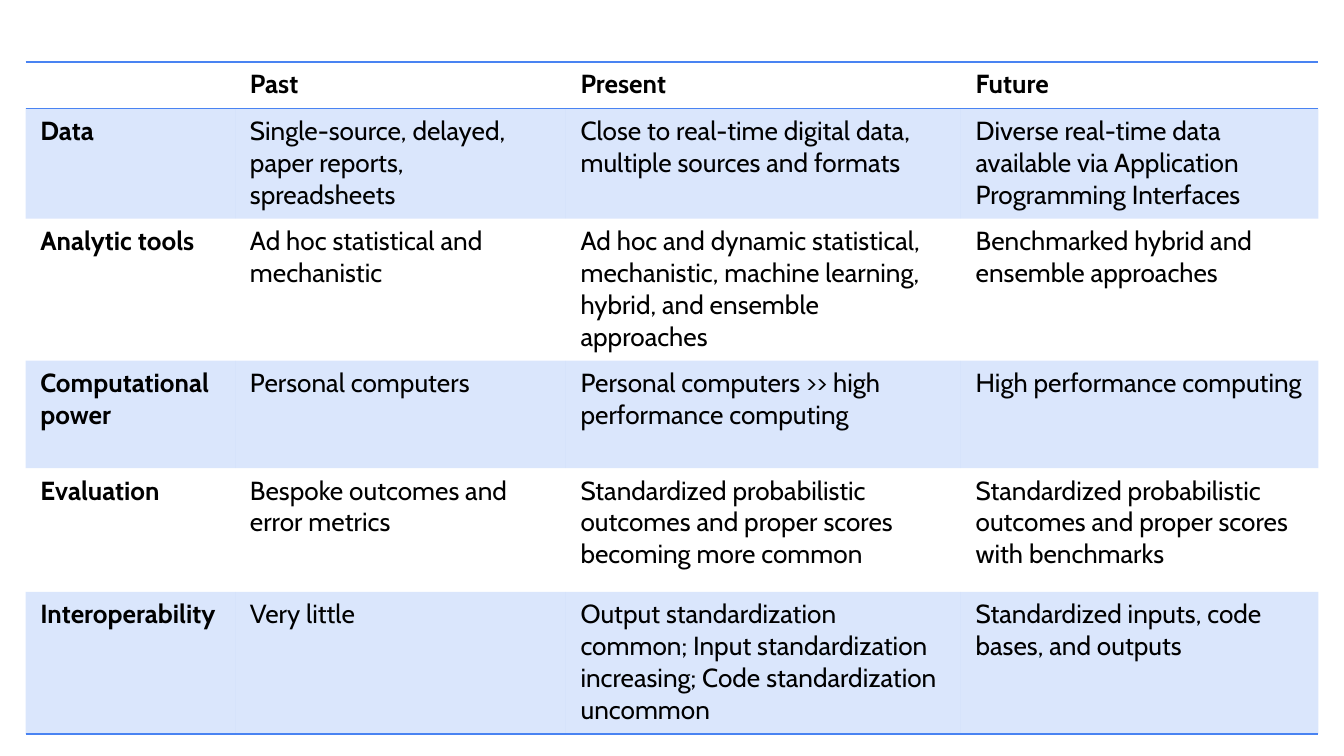
import pptx
import pptx.util
import pptx.dml.color
import pptx.oxml.ns
import lxml.etree

Inches, Pt, qn = pptx.util.Inches, pptx.util.Pt, pptx.oxml.ns.qn

COLORS = {"text": "000000", "accent": "4983F2"}
BAND_ALPHA = 20
NO_STYLE = "{2D5ABB26-0587-4C30-8999-92F81FD0307C}"
COLS = [1.56, 2.46, 2.94, 2.66]
HEIGHTS = [0.34, 0.8, 0.92, 0.8, 0.92, 0.92]
ROWS = [
    ["", "Past", "Present", "Future"],
    ["Data",
     "Single-source, delayed, paper reports, spreadsheets",
     "Close to real-time digital data, multiple sources and formats",
     "Diverse real-time data available via Application Programming Interfaces"],
    ["Analytic tools",
     "Ad hoc statistical and mechanistic",
     "Ad hoc and dynamic statistical, mechanistic, machine learning, hybrid, and ensemble approaches",
     "Benchmarked hybrid and ensemble approaches"],
    ["Computational power",
     "Personal computers",
     "Personal computers >> high performance computing",
     "High performance computing"],
    ["Evaluation",
     "Bespoke outcomes and error metrics",
     "Standardized probabilistic outcomes and proper scores becoming more common",
     "Standardized probabilistic outcomes and proper scores with benchmarks"],
    ["Interoperability",
     "Very little",
     "Output standardization common; Input standardization increasing; Code standardization uncommon",
     "Standardized inputs, code bases, and outputs"],
]


class Deck:
    """Holds the style and the current slide, and draws the table on it."""

    font = {"name": "Cabin", "size": Pt(14)}
    margins = {"margin_left": Inches(0.11), "margin_right": Inches(0.11),
               "margin_top": Inches(0.05), "margin_bottom": Inches(0.06)}

    def __init__(self, prs):
        self.s = prs.slides.add_slide(prs.slide_layouts[6])

    def text(self, cell, text, bold):
        p = cell.text_frame.paragraphs[0]
        if not text:
            lxml.etree.SubElement(p._p, qn("a:endParaRPr"), sz=str(int(self.font["size"].pt * 100)))
            return
        r = p.add_run()
        r.text = text
        for key, value in {**self.font, "bold": bold}.items():
            setattr(r.font, key, value)
        r.font.color.rgb = pptx.dml.color.RGBColor.from_string(COLORS["text"])

    def border(self, cell, side):
        tc_pr = cell._tc.get_or_add_tcPr()
        ln = lxml.etree.SubElement(tc_pr, qn(f"a:ln{side}"), w=str(Pt(1)))
        fill = lxml.etree.SubElement(ln, qn("a:solidFill"))
        lxml.etree.SubElement(fill, qn("a:srgbClr"), val=COLORS["accent"])

    def band(self, cell):
        cell.fill.solid()
        cell.fill.fore_color.rgb = pptx.dml.color.RGBColor.from_string(COLORS["accent"])
        color = cell._tc.tcPr.find(f"{qn('a:solidFill')}/{qn('a:srgbClr')}")
        lxml.etree.SubElement(color, qn("a:alpha"), val=str(BAND_ALPHA * 1000))

    def table(self, left, top, cols, heights, rows):
        frame = self.s.shapes.add_table(len(rows), len(cols), Inches(left), Inches(top),
                                        Inches(sum(cols)), Inches(sum(heights)))
        table = frame.table
        table._tbl.tblPr.find(qn("a:tableStyleId")).text = NO_STYLE
        table.horz_banding = False
        for col, width in zip(table.columns, cols):
            col.width = Inches(width)
        for i, (row, height) in enumerate(zip(rows, heights)):
            table.rows[i].height = Inches(height)
            sides = "TB" if i == 0 else "B" if i == len(rows) - 1 else ""
            for j, text in enumerate(row):
                cell = table.cell(i, j)
                for key, value in self.margins.items():
                    setattr(cell, key, value)
                self.text(cell, text, bold=i == 0 or j == 0)
                for side in sides:
                    self.border(cell, side)
                if i % 2:
                    self.band(cell)
                else:
                    cell.fill.background()


def main():
    prs = pptx.Presentation()
    prs.slide_width = Inches(10)
    prs.slide_height = prs.slide_width * 9 // 16
    Deck(prs).table(0.19, 0.46, COLS, HEIGHTS, ROWS)
    prs.save("out.pptx")


if __name__ == "__main__":
    main()
